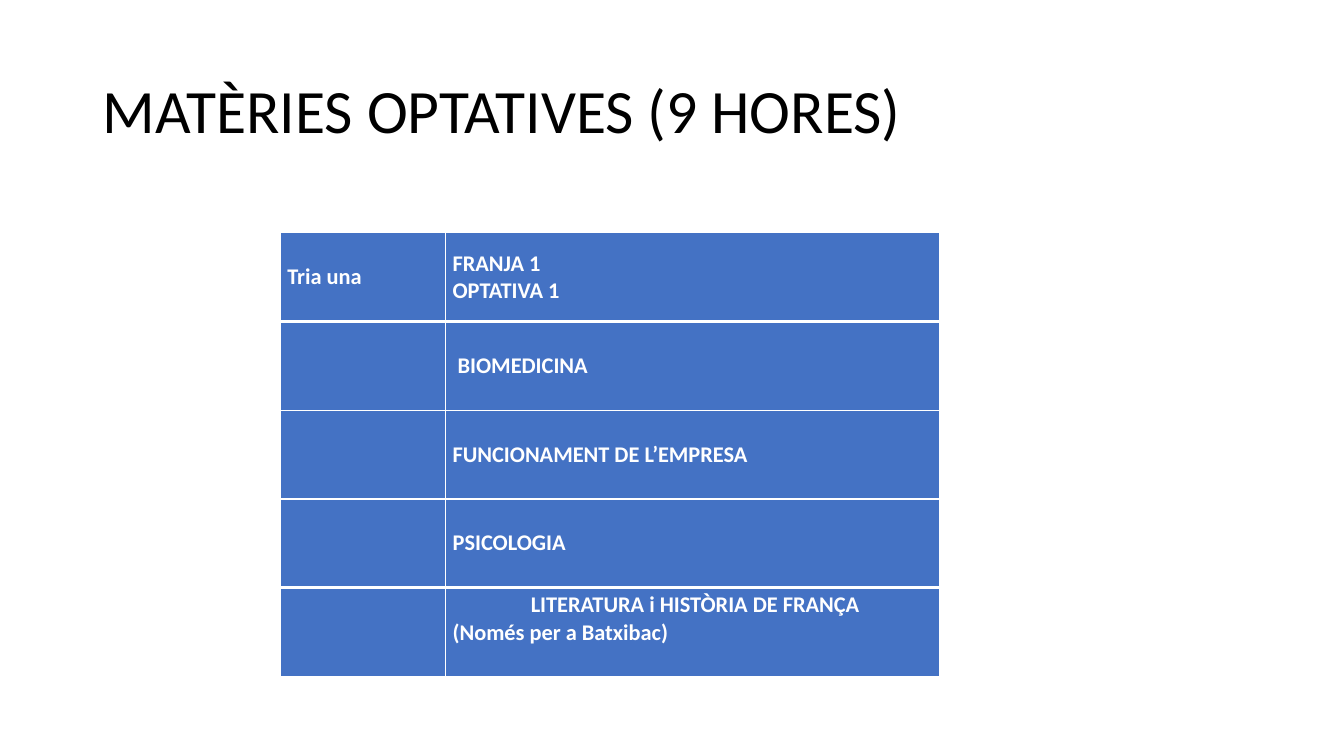
from lxml import etree
from pptx import Presentation
from pptx.dml.color import RGBColor
from pptx.enum import text
from pptx.oxml import ns
from pptx.util import Inches, Pt

BLACK = RGBColor(0, 0, 0)
WHITE = RGBColor(255, 255, 255)
BLUE = RGBColor(0x44, 0x72, 0xC4)
FONT = "Calibri"

LEFT, JUST, MID = text.PP_ALIGN.LEFT, text.PP_ALIGN.JUSTIFY, text.PP_ALIGN.CENTER

# Each row: left text, then (line, alignment) pairs of the right cell
ROWS = [
    ("Tria una", [("FRANJA 1", LEFT), ("OPTATIVA 1", LEFT)]),
    ("", [(" BIOMEDICINA", JUST)]),
    ("", [("FUNCIONAMENT DE L’EMPRESA", JUST)]),
    ("", [("PSICOLOGIA", JUST)]),
    ("", [(" LITERATURA i HISTÒRIA DE FRANÇA", MID), ("(Només per a Batxibac)", LEFT)]),
]
COLS = (1.64, 4.9)
HIGH = 0.88


def style(para, size, color, bold=False):
    font = para.font
    font.name, font.size, font.bold = FONT, Pt(size), bold
    font.color.rgb = color


def add_title(slide, words):
    title = slide.shapes.title
    title.left, title.top = Inches(0.92), Inches(0.4)
    title.width, title.height = Inches(11.5), Inches(1.45)
    frame = title.text_frame
    frame.text = words
    frame.vertical_anchor = text.MSO_ANCHOR.MIDDLE
    para = frame.paragraphs[0]
    para.alignment, para.line_spacing = LEFT, 0.9
    style(para, 44, BLACK)


def add_edges(cell, top, bottom):
    props = cell._tc.get_or_add_tcPr()
    edges = (("L", 1), ("R", 1), ("T", top), ("B", bottom))
    for spot, (side, width) in enumerate(edges):
        line = etree.Element(ns.qn(f"a:ln{side}"), w=str(Pt(width)))
        fill = etree.SubElement(line, ns.qn("a:solidFill"))
        etree.SubElement(fill, ns.qn("a:srgbClr"), val=str(WHITE))
        props.insert(spot, line)


def fill_cell(cell, lines, anchor):
    cell.fill.solid()
    cell.fill.fore_color.rgb = BLUE
    cell.vertical_anchor = anchor
    cell.margin_left = cell.margin_right = Inches(0.07)
    cell.margin_top = cell.margin_bottom = 0
    frame = cell.text_frame
    frame.text = "\n".join(line for line, _ in lines)
    for para, (_, align) in zip(frame.paragraphs, lines):
        para.alignment = align
        style(para, 16, WHITE, True)


def add_grid(slide):
    last = len(ROWS) - 1
    frame = slide.shapes.add_table(
        len(ROWS), len(COLS), Inches(2.78), Inches(2.31),
        Inches(sum(COLS)), Inches(HIGH * len(ROWS)))
    table = frame.table
    for col, width in zip(table.columns, COLS):
        col.width = Inches(width)
    for i, (label, lines) in enumerate(ROWS):
        table.rows[i].height = Inches(HIGH)
        # Thick rules set off the first and the last row
        top = 3 if i in (1, last) else 1
        bottom = 3 if i in (0, last - 1) else 1
        for j, part in enumerate(([(label, LEFT)], lines)):
            cell = table.cell(i, j)
            fill_cell(cell, part, text.MSO_ANCHOR.MIDDLE)
            add_edges(cell, top, bottom)
    # The closing note sits at the top of its cell
    note = table.cell(last, 1)
    note.vertical_anchor = text.MSO_ANCHOR.TOP
    note.margin_top = Inches(0.04)


def main():
    deck = Presentation()
    deck.slide_width, deck.slide_height = Inches(13.33), Inches(7.5)
    slide = deck.slides.add_slide(deck.slide_layouts[5])
    add_title(slide, "MATÈRIES OPTATIVES (9 HORES)")
    add_grid(slide)
    deck.save("out.pptx")


if __name__ == "__main__":
    main()
